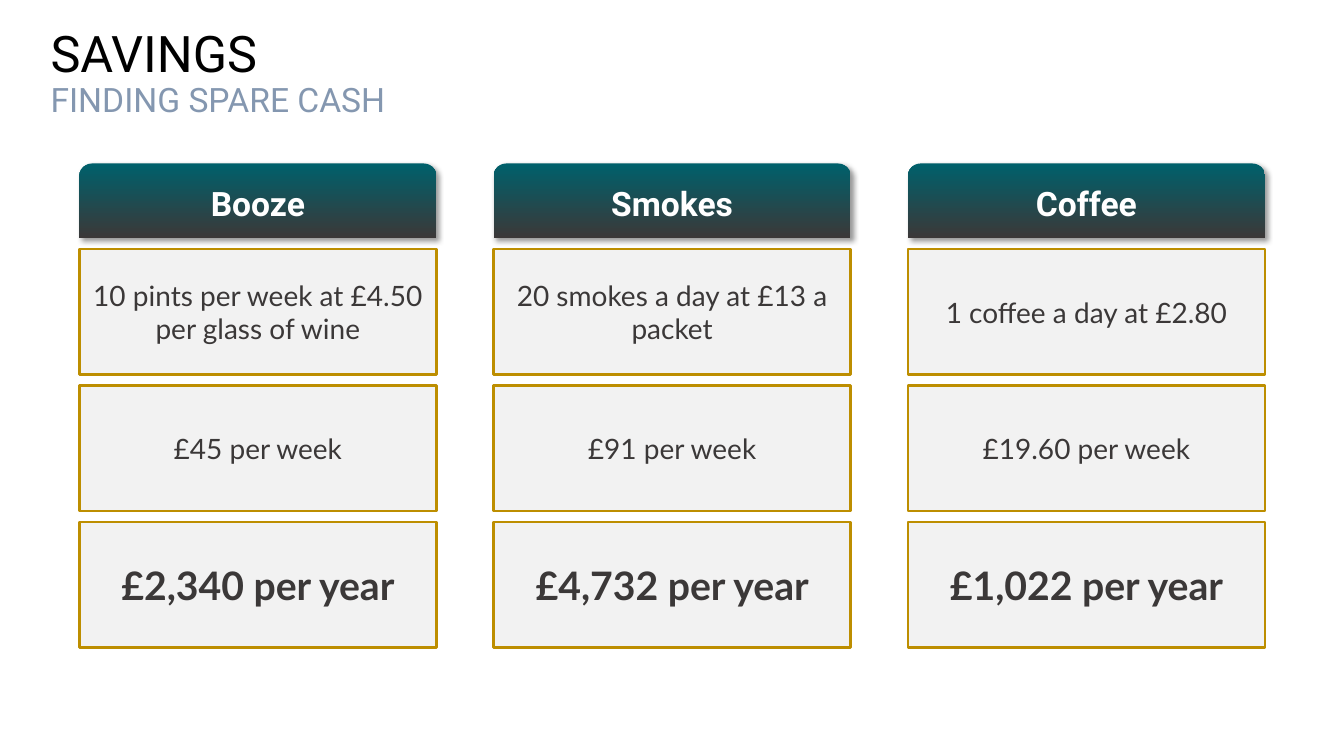
import pptx
import pptx.dml.color
import pptx.enum.shapes
import pptx.enum.text
import pptx.oxml
import pptx.oxml.ns
import pptx.util

Cm, Pt = pptx.util.Cm, pptx.util.Pt
SHAPE = pptx.enum.shapes.MSO_SHAPE
ALIGN = pptx.enum.text.PP_ALIGN

COLORS = {
    "black": "000000",
    "subtitle": "8497B0",
    "teal": "00606B",
    "charcoal": "3B3838",
    "panel": "F2F2F2",
    "gold": "BD8E00",
    "white": "FFFFFF",
}
FORMATS = {
    "title": {"name": "Roboto", "size": Pt(36), "bold": False, "color": "black"},
    "subtitle": {"name": "Roboto", "size": Pt(24), "bold": False, "color": "subtitle"},
    "header": {"name": "Roboto", "size": Pt(24), "bold": True, "color": "white"},
    "detail": {"name": "Lato", "size": Pt(20), "bold": False, "color": "charcoal"},
    "total": {"name": "Lato", "size": Pt(28), "bold": True, "color": "charcoal"},
}
HABITS = [
    ("Booze", "10 pints per week at £4.50 per glass of wine", "£45 per week", "£2,340 per year"),
    ("Smokes", "20 smokes a day at £13 a packet", "£91 per week", "£4,732 per year"),
    ("Coffee", "1 coffee a day at £2.80", "£19.60 per week", "£1,022 per year"),
]
CELL_STYLES = ("detail", "detail", "total")

LEFT, COLUMN_STEP, WIDTH = 2.0, 10.44, 9.0
HEADER_TOP, HEADER_HEIGHT = 4.12, 1.89
CELL_TOP, CELL_STEP, CELL_HEIGHT = 6.28, 3.44, 3.16


def rgb(name):
    return pptx.dml.color.RGBColor.from_string(COLORS[name])


class SlideBuilder:
    def __init__(self, prs):
        self.slide = prs.slides.add_slide(prs.slide_layouts[5])

    def set_text(self, sp, lines, align):
        """Fill a shape with (text, format name) lines, one paragraph each."""
        tf = sp.text_frame
        tf.word_wrap = True
        tf.auto_size = pptx.enum.text.MSO_AUTO_SIZE.NONE
        tf.vertical_anchor = pptx.enum.text.MSO_ANCHOR.MIDDLE
        for i, (text, style) in enumerate(lines):
            p = tf.add_paragraph() if i else tf.paragraphs[0]
            p.alignment = align
            r = p.add_run()
            r.text = text
            for key, value in FORMATS[style].items():
                if key == "color":
                    r.font.color.rgb = rgb(value)
                else:
                    setattr(r.font, key, value)

    def title(self, text, subtitle):
        sp = self.slide.shapes.title
        sp.left, sp.top, sp.width, sp.height = Cm(1.02), Cm(0.86), Cm(25.88), Cm(2.03)
        self.set_text(sp, [(text, "title"), (subtitle, "subtitle")], ALIGN.LEFT)
        for p in sp.text_frame.paragraphs:
            p.line_spacing = 0.9
            p.space_before = Pt(0)

    def box(self, kind, x, y, height, text, style):
        sp = self.slide.shapes.add_shape(kind, Cm(x), Cm(y), Cm(WIDTH), Cm(height))
        sp.shadow.inherit = False
        self.set_text(sp, [(text, style)], ALIGN.CENTER)
        return sp

    def header(self, x, text):
        sp = self.box(SHAPE.ROUND_2_SAME_RECTANGLE, x, HEADER_TOP, HEADER_HEIGHT, text, "header")
        sp.fill.gradient()
        sp.fill.gradient_angle = 270
        for stop, position, color in zip(sp.fill.gradient_stops, (0, 1), ("teal", "charcoal")):
            stop.position = position
            stop.color.rgb = rgb(color)
        sp.line.fill.background()
        self.add_shadow(sp)

    def add_shadow(self, sp):
        effects = sp._element.spPr.find(pptx.oxml.ns.qn("a:effectLst"))
        effects.append(pptx.oxml.parse_xml(
            f'<a:outerShdw {pptx.oxml.ns.nsdecls("a")} blurRad="{Pt(4)}" dist="{Pt(3)}" '
            f'dir="2700000" algn="tl" rotWithShape="0"><a:srgbClr val="{COLORS["black"]}">'
            '<a:alpha val="40000"/></a:srgbClr></a:outerShdw>'))

    def cell(self, x, y, text, style):
        sp = self.box(SHAPE.RECTANGLE, x, y, CELL_HEIGHT, text, style)
        sp.fill.solid()
        sp.fill.fore_color.rgb = rgb("panel")
        sp.line.color.rgb = rgb("gold")
        sp.line.width = Pt(1.75)


def main():
    prs = pptx.Presentation()
    prs.slide_width, prs.slide_height = Cm(33.87), Cm(19.05)
    s = SlideBuilder(prs)
    s.title("SAVINGS", "FINDING SPARE CASH")
    for column, (habit, *costs) in enumerate(HABITS):
        x = LEFT + column * COLUMN_STEP
        s.header(x, habit)
        for row, (cost, style) in enumerate(zip(costs, CELL_STYLES)):
            s.cell(x, CELL_TOP + row * CELL_STEP, cost, style)
    prs.save("out.pptx")


if __name__ == "__main__":
    main()
